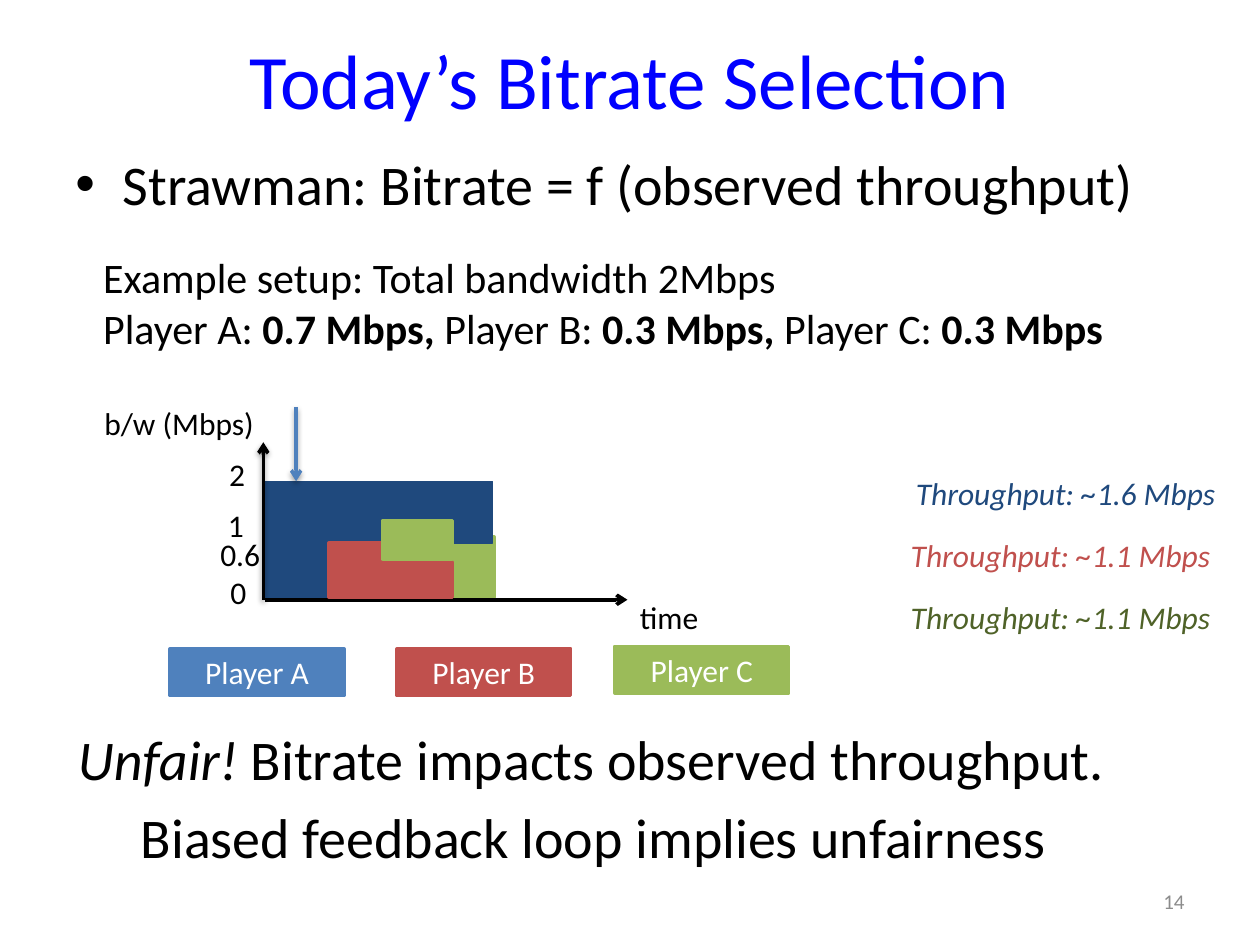
from pptx import Presentation
from pptx.util import Inches, Pt
from pptx.dml.color import RGBColor
from pptx.enum.shapes import MSO_SHAPE as Kind, MSO_CONNECTOR as Wire
from pptx.enum.text import PP_ALIGN as Align, MSO_ANCHOR as Anchor
from pptx.oxml import parse_xml
from pptx.oxml.ns import nsdecls

BLACK = RGBColor(0, 0, 0)
WHITE = RGBColor(255, 255, 255)
GRAY = RGBColor(0x8C, 0x8C, 0x8C)
TITLE = RGBColor(0, 0, 255)
NAVY = RGBColor(0x1F, 0x49, 0x7D)
BLUE = RGBColor(0x4F, 0x81, 0xBD)
RED = RGBColor(0xC0, 0x50, 0x4D)
GREEN = RGBColor(0x9B, 0xBB, 0x59)
OLIVE = RGBColor(0x4F, 0x62, 0x28)

# All lengths are shares, in percent, of the slide's width
WIDE, HIGH = 100, 75
UNIT = Inches(10) / WIDE
B, I = {"bold": True}, {"italic": True}

# Paragraphs are lists of (text, style) runs
HEAD = [[("Today’s Bitrate Selection", {})]]
POINT = [[("Strawman: Bitrate = f (observed throughput)", {})]]
SETUP = [
    [("Example setup: Total bandwidth 2Mbps", {})],
    [("Player A: ", {}), ("0.7 Mbps, ", B), ("Player B: ", {}),
     ("0.3 Mbps, ", B), ("Player C: ", {}), ("0.3 Mbps", B)],
]
CLOSE = [
    [("Unfair! ", I), ("Bitrate impacts observed throughput.", {})],
    [("Biased feedback loop implies unfairness", {})],
]

# Chart labels: text, left, top, width
MARKS = [
    ("b/w (Mbps)", 7.3, 31.6, 14), ("2", 17.2, 35.6, 3.3),
    ("1", 17.1, 39.7, 3.3), ("0.6", 16.5, 42, 5.2),
    ("0", 17.3, 45, 3.3), ("time", 49.8, 47, 6.7),
]
# Bandwidth blocks: colour, line width, left, top, width, height
BACK = [(GREEN, 2, 36, 42.6, 3.2, 4.8)]
FRONT = [
    (NAVY, 0.75, 21, 38.2, 18.1, 3.1), (NAVY, 0.75, 20.9, 38.6, 5.1, 8.8),
    (NAVY, 0.75, 26, 38.2, 6.8, 4.9), (RED, 2, 26.1, 43.1, 4.2, 4.2),
    (NAVY, 0.75, 34.1, 38.3, 5, 4.8), (RED, 2, 26.1, 44.6, 9.8, 2.8),
    (GREEN, 2, 30.4, 41.3, 5.5, 3.1),
]
# Players: name, colour, left, top
KEYS = [("Player A", BLUE, 13.5, 51.5), ("Player B", RED, 31.5, 51.5),
        ("Player C", GREEN, 48.8, 51.3)]
# Throughputs: rate, colour, left
RATES = [("1.6", NAVY, 71.7), ("1.1", RED, 71.3), ("1.1", OLIVE, 71.3)]


def u(*vals):
    return [round(v * UNIT) for v in vals]


def put(obj, vals):
    for name, val in vals.items():
        setattr(obj, name, val)


def fill(frame, paras, size, color, align=Align.LEFT, gap=0):
    for n, runs in enumerate(paras):
        para = frame.add_paragraph() if n else frame.paragraphs[0]
        put(para, {"alignment": align, "space_before": Pt(gap)})
        for words, style in runs:
            run = para.add_run()
            run.text = words
            put(run.font, {"name": "Calibri", "size": Pt(size), **style})
            run.font.color.rgb = color


def text(paras, at, size, color=BLACK, wrap=True, anchor=Anchor.TOP, **more):
    frame = slide.shapes.add_textbox(*u(*at)).text_frame
    put(frame, {"word_wrap": wrap, "vertical_anchor": anchor})
    fill(frame, paras, size, color, **more)
    return frame


def block(color, width, *at):
    shape = slide.shapes.add_shape(Kind.RECTANGLE, *u(*at))
    shape.shadow.inherit = False
    shape.fill.solid()
    shape.fill.fore_color.rgb = shape.line.color.rgb = color
    shape.line.width = Pt(width)
    return shape


def arrow(color, *ends, shade=True):
    wire = slide.shapes.add_connector(Wire.STRAIGHT, *u(*ends))
    wire.line.color.rgb = color
    wire.line.width = Pt(2)
    wire.line._get_or_add_ln().append(
        parse_xml(f'<a:tailEnd {nsdecls("a")} type="arrow"/>'))
    glow = ('<a:outerShdw blurRad="40000" dist="20000" dir="5400000" rotWithShape="0">'
            '<a:srgbClr val="000000"><a:alpha val="38000"/></a:srgbClr>'
            '</a:outerShdw>') if shade else ""
    wire._element.spPr.append(
        parse_xml(f'<a:effectLst {nsdecls("a")}>{glow}</a:effectLst>'))


def indent(para, left, first=0, bullet=None):
    props = para._p.get_or_add_pPr()
    left, first = u(left, first)
    props.set("marL", str(left))
    props.set("indent", str(first))
    if bullet:
        for tag in ('buFont {} typeface="Arial"', 'buChar {} char="' + bullet + '"'):
            props.append(parse_xml(f'<a:{tag.format(nsdecls("a"))}/>'))


prs = Presentation()
prs.slide_width, prs.slide_height = u(WIDE, HIGH)
slide = prs.slides.add_slide(prs.slide_layouts[6])

# Title, bullet, setup and page number
text(HEAD, (5, 0, 90, 12.5), 44, TITLE, anchor=Anchor.MIDDLE, align=Align.CENTER)
point = text(POINT, (5, 11.4, 95, 13.5), 32, gap=6.4)
indent(point.paragraphs[0], 3.75, -3.75, "•")
text(SETUP, (7.2, 19.5, 83.2, 9.1), 24)
text([[("14", {})]], (71.7, 69.5, 23.3, 4), 12, GRAY,
     anchor=Anchor.MIDDLE, align=Align.RIGHT)

# Bandwidth chart with its axes
for part in BACK:
    block(*part)
arrow(BLACK, 21, 47.6, 49.8, 47.6, shade=False)
for part in FRONT:
    block(*part)
arrow(BLACK, 20.9, 47.6, 20.9, 35.1)
arrow(BLUE, 23.5, 32.3, 23.5, 38.2)
for words, left, top, width in MARKS:
    text([[(words, {})]], (left, top, width, 4), 18, wrap=False)

# Player keys and their throughputs
for name, color, left, top in KEYS:
    key = block(color, 2, left, top, 13.8, 3.7).text_frame
    key.vertical_anchor = Anchor.MIDDLE
    fill(key, [[(name, {})]], 18, WHITE, Align.CENTER)
for row, (rate, color, left) in enumerate(RATES):
    text([[(f"Throughput: ~{rate} Mbps", I)]],
         (left, 37.1 + 4.95 * row, 26.7, 4), 18, color, wrap=False)

# Conclusion
close = text(CLOSE, (5.2, 57, 86.7, 12.2), 32, gap=6.4)
indent(close.paragraphs[1], 5)

prs.save("out.pptx")
